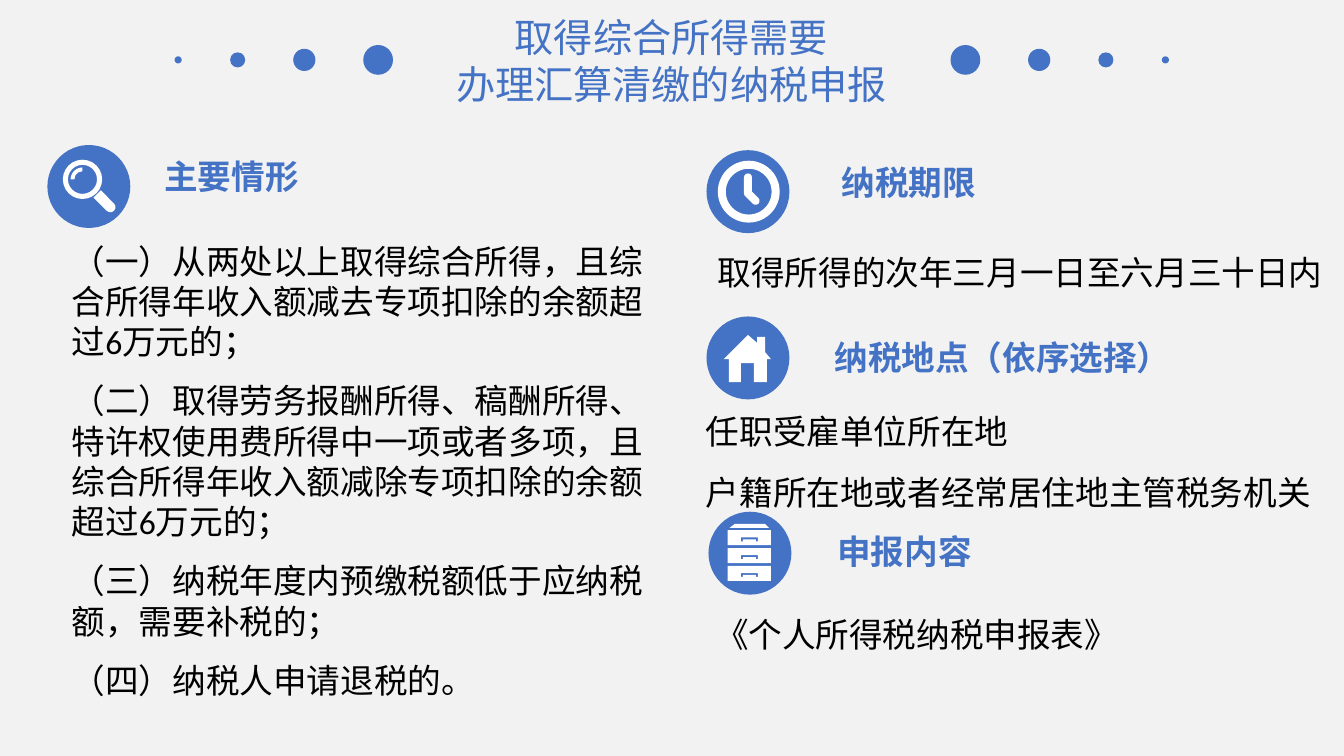
from pptx import Presentation
from pptx import util as u
from pptx.dml.color import RGBColor
from pptx.enum import shapes, text

BLUE = RGBColor(0x44, 0x72, 0xC4)
WHITE = RGBColor(0xFF, 0xFF, 0xFF)
BLACK = RGBColor(0, 0, 0)
GREY = RGBColor(0xF2, 0xF2, 0xF2)
SHAPE = shapes.MSO_SHAPE

TITLE = {"size": u.Pt(28), "name": "Noto Sans CJK SC", "bold": False}
HEADING = {"size": u.Pt(24), "name": "Roboto", "bold": True}
ARIAL = {"size": u.Pt(24), "name": "Arial"}
CALIBRI = {"size": u.Pt(24), "name": "Calibri"}


class SlideBuilder:
    def __init__(self, presentation):
        self.slide = presentation.slides.add_slide(presentation.slide_layouts[5])
        fill = self.slide.background.fill
        fill.solid()
        fill.fore_color.rgb = GREY

    def fill_text(self, shape, lines, font, color, wrap=True, margins=(0.25, 0.13), spacing=None):
        frame = shape.text_frame
        horizontal, vertical = map(u.Cm, margins)
        frame_format = {
            "word_wrap": wrap, "auto_size": text.MSO_AUTO_SIZE.NONE,
            "margin_left": horizontal, "margin_right": horizontal,
            "margin_top": vertical, "margin_bottom": vertical,
        }
        for name, value in frame_format.items():
            setattr(frame, name, value)
        for index, line in enumerate(lines):
            paragraph = frame.add_paragraph() if index else frame.paragraphs[0]
            for name, value in (spacing or {}).items():
                if index or name != "space_before":
                    setattr(paragraph, name, value)
            run = paragraph.add_run()
            run.text = line
            for name, value in font.items():
                setattr(run.font, name, value)
            run.font.color.rgb = color

    def title(self, box, lines):
        shape = self.slide.shapes.title
        for name, value in zip(("left", "top", "width", "height"), box):
            setattr(shape, name, u.Cm(value))
        shape.text_frame.vertical_anchor = text.MSO_ANCHOR.MIDDLE
        self.fill_text(shape, lines, TITLE, BLUE, wrap=False,
                       spacing={"alignment": text.PP_ALIGN.CENTER, "line_spacing": 1.0})

    def text_box(self, box, lines, font, color=BLACK, **options):
        shape = self.slide.shapes.add_textbox(*map(u.Cm, box))
        self.fill_text(shape, lines, font, color, **options)

    def paint(self, shape, color):
        shape.shadow.inherit = False
        shape.fill.solid()
        shape.fill.fore_color.rgb = color
        shape.line.fill.background()

    def preset(self, kind, center, size, color=WHITE, rotation=0, adjustments=()):
        (x, y), (width, height) = center, size
        shape = self.slide.shapes.add_shape(
            kind, u.Cm(x - width / 2), u.Cm(y - height / 2), u.Cm(width), u.Cm(height))
        shape.rotation = rotation
        for index, value in enumerate(adjustments):
            shape.adjustments[index] = value
        self.paint(shape, color)

    def disc(self, center, diameter):
        self.preset(SHAPE.OVAL, center, (diameter, diameter), BLUE)

    def outline(self, center, *contours):
        builder = None
        for contour in contours:
            points = [((center[0] + x) * 100, (center[1] + y) * 100) for x, y in contour]
            if builder is None:
                builder = self.slide.shapes.build_freeform(*points[0], scale=u.Cm(0.01))
            else:
                builder.move_to(*points[0])
            builder.add_line_segments(points[1:], close=True)
        self.paint(builder.convert_to_shape(), WHITE)

    def magnifier(self, x, y):
        lens = (x - 0.16, y - 0.18)
        self.preset(SHAPE.ROUND_2_SAME_RECTANGLE, (x + 0.42, y + 0.4), (0.26, 0.6),
                    rotation=135, adjustments=(0.5,))
        self.preset(SHAPE.DONUT, lens, (0.99, 0.99), adjustments=(0.13,))
        self.preset(SHAPE.BLOCK_ARC, lens, (0.6, 0.6), adjustments=(108, 162, 0.16))

    def clock(self, x, y):
        self.preset(SHAPE.DONUT, (x + 0.02, y), (1.56, 1.56), adjustments=(0.13,))
        self.preset(SHAPE.ROUNDED_RECTANGLE, (x, y - 0.16), (0.2, 0.6), adjustments=(0.5,))
        self.preset(SHAPE.ROUNDED_RECTANGLE, (x + 0.1, y + 0.14), (0.2, 0.46),
                    rotation=135, adjustments=(0.5,))

    def house(self, x, y):
        self.outline((x, y), [
            (0.43, -0.15), (0.43, -0.53), (0.23, -0.53), (0.23, -0.38), (0, -0.58),
            (-0.61, 0.03), (-0.48, 0.03), (-0.48, 0.61), (-0.18, 0.61), (-0.18, 0.13),
            (0.15, 0.13), (0.15, 0.61), (0.48, 0.61), (0.48, 0.03), (0.58, 0.03)])

    def cabinet(self, x, y):
        front = [(-0.56, 0.38), (0.53, 0.38), (0.53, 0), (-0.56, 0)]
        handle = [(0.2, 0.18), (0.2, 0.28), (0.15, 0.28), (0.15, 0.23),
                  (-0.18, 0.23), (-0.18, 0.28), (-0.23, 0.28), (-0.23, 0.18)]
        self.outline((x, y), [(-0.51, -0.64), (-0.38, -0.74), (0.38, -0.74), (0.48, -0.64)])
        for drawer in range(3):
            self.outline((x, y - 0.58 + drawer * 0.45), front, handle)


def main():
    presentation = Presentation()
    presentation.slide_width = u.Cm(33.87)
    presentation.slide_height = u.Cm(19.05)
    builder = SlideBuilder(presentation)

    builder.title((11.18, 0.18, 11.48, 2.67), ["取得综合所得需要", "办理汇算清缴的纳税申报"])
    for distance, diameter in ((7.4, 0.75), (9.26, 0.56), (10.94, 0.38), (12.44, 0.18)):
        for side in (-1, 1):
            builder.disc((16.93 + side * distance, 1.51), diameter)

    sections = [
        ("主要情形", (3.89, 3.81, 6.02, 1.3), (2.24, 4.7), builder.magnifier),
        ("纳税期限", (20.96, 3.96, 6.02, 1.3), (18.85, 4.83), builder.clock),
        ("纳税地点（依序选择）", (20.78, 8.36, 10.44, 1.27), (18.85, 9.02), builder.house),
        ("申报内容", (20.85, 13.26, 6.02, 1.3), (18.9, 13.94), builder.cabinet),
    ]
    for heading, box, center, draw_icon in sections:
        builder.disc(center, 2.09)
        draw_icon(*center)
        builder.text_box(box, [heading], HEADING, BLUE)

    margins = (0.34, 0.17)
    builder.text_box((1.47, 5.89, 15.16, 11.96), [
        "（一）从两处以上取得综合所得，且综合所得年收入额减去专项扣除的余额超过6万元的；",
        "（二）取得劳务报酬所得、稿酬所得、特许权使用费所得中一项或者多项，"
        "且综合所得年收入额减除专项扣除的余额超过6万元的；",
        "（三）纳税年度内预缴税额低于应纳税额，需要补税的；",
        "（四）纳税人申请退税的。",
    ], CALIBRI, margins=margins, spacing={"space_before": u.Pt(13.4)})
    builder.text_box((17.75, 6.17, 16.08, 1.37), ["取得所得的次年三月一日至六月三十日内"],
                     ARIAL, wrap=False, margins=margins)
    builder.text_box((17.45, 9.68, 16, 3.4), ["任职受雇单位所在地", "户籍所在地或者经常居住地主管税务机关"],
                     ARIAL, margins=margins, spacing={"line_spacing": 1.5})
    builder.text_box((17.68, 15.29, 10.95, 1.37), ["《个人所得税纳税申报表》"],
                     CALIBRI, wrap=False, margins=margins)
    presentation.save("out.pptx")


if __name__ == "__main__":
    main()
